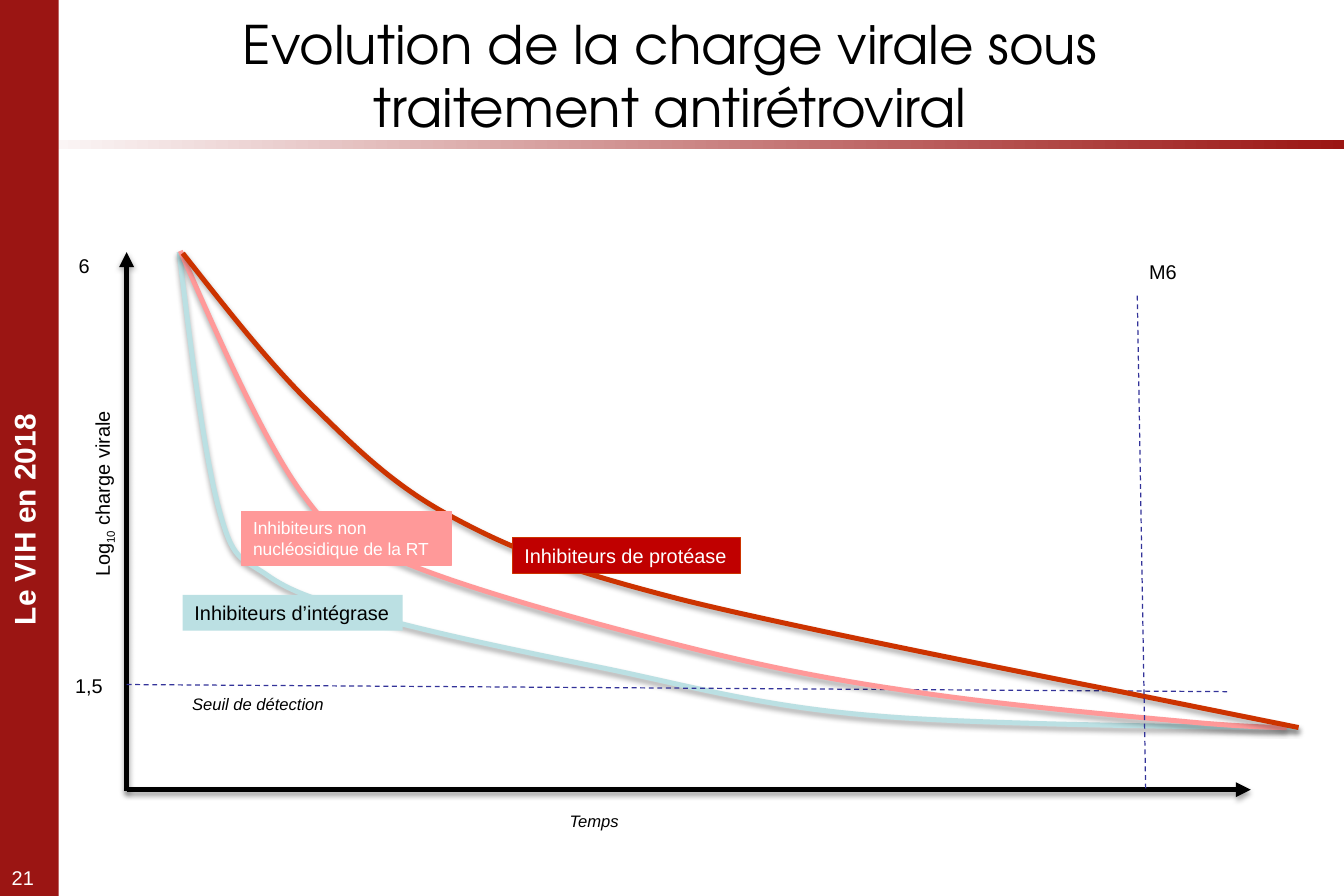
import pptx
import pptx.util
import pptx.dml.color
import pptx.enum.dml
import pptx.enum.shapes
import pptx.enum.text
import lxml.etree
from pptx.util import Inches

COLORS = {
    "red": "9B1513", "white": "FFFFFF", "black": "000000", "dash": "333399",
    "integrase": "BBE0E3", "nnrti": "FF9999", "protease": "CC3300", "label": "C00000",
}
RGB = {name: pptx.dml.color.RGBColor.from_string(c) for name, c in COLORS.items()}
RECT = pptx.enum.shapes.MSO_SHAPE.RECTANGLE
STRAIGHT = pptx.enum.shapes.MSO_CONNECTOR.STRAIGHT
ALIGN = pptx.enum.text.PP_ALIGN
FIT = pptx.enum.text.MSO_AUTO_SIZE
qn = pptx.oxml.ns.qn


def write(sp, text, size, color="black", wrap=False, align=ALIGN.LEFT,
          font="Arial", bold=False, italic=False, fit=FIT.SHAPE_TO_FIT_TEXT):
    tf = sp.text_frame
    tf.word_wrap = wrap
    tf.auto_size = fit
    p = tf.paragraphs[0]
    p.text = text
    p.alignment = align
    p.font.name, p.font.size = font, pptx.util.Pt(size)
    p.font.bold, p.font.italic = bold, italic
    p.font.color.rgb = RGB[color]
    return p


def style_line(sp, color, width, shadow=False, arrow=False, dash=False):
    sp.line.color.rgb = RGB[color]
    sp.line.width = pptx.util.Pt(width)
    if dash:
        sp.line.dash_style = pptx.enum.dml.MSO_LINE.DASH
    if arrow:
        lxml.etree.SubElement(sp.line._ln, qn("a:tailEnd")).set("type", "triangle")
    xml = '<a:effectLst xmlns:a="http://schemas.openxmlformats.org/drawingml/2006/main">'
    if shadow:
        xml += ('<a:outerShdw blurRad="40000" dist="23000" dir="5400000" rotWithShape="0">'
                '<a:srgbClr val="000000"><a:alpha val="35000"/></a:srgbClr></a:outerShdw>')
    sp._element.spPr.append(pptx.oxml.parse_xml(xml + "</a:effectLst>"))


prs = pptx.Presentation()
prs.slide_width, prs.slide_height = Inches(11.25), Inches(7.5)
s = prs.slides.add_slide(prs.slide_layouts[6])

# Gradient rule under the title
rule = s.shapes.add_shape(RECT, 0, Inches(1.17), Inches(11.25), Inches(0.08))
rule.shadow.inherit = False
rule.line.fill.background()
rule.fill.gradient()
rule.fill.gradient_angle = 0
for stop, name in zip(rule.fill.gradient_stops, ("white", "red")):
    stop.color.rgb = RGB[name]

# Side band with its title and the slide number
band = s.shapes.add_shape(RECT, 0, 0, Inches(0.49), Inches(7.5))
band.shadow.inherit = False
band.line.fill.background()
band.fill.solid()
band.fill.fore_color.rgb = RGB["red"]
sp = s.shapes.add_textbox(Inches(-0.79), Inches(4.15), Inches(1.98), Inches(0.4))
sp.rotation = 270
write(sp, "Le VIH en 2018", 18, "white", align=ALIGN.CENTER, bold=True)
sp = s.shapes.add_textbox(0, Inches(7.2), Inches(0.46), Inches(0.3))
write(sp, "21", 12, "white", wrap=True)

# Axes, markers and viral load curves, from back to front.
# Two points make a line; a curve has a start and three Bezier points per segment,
# and a single point left over ends it with a straight segment.
axis = dict(color="black", width=3, shadow=True, arrow=True)
marker = dict(color="dash", width=0.75, dash=True)
load = dict(width=3, shadow=True)
for pts, look in [
    ([(1.5, 2.11), (1.6, 2.95), (1.71, 3.8), (1.83, 4.25),
      (1.95, 4.7), (2.01, 4.66), (2.23, 4.81),
      (2.44, 4.96), (2.67, 5.03), (3.13, 5.16),
      (3.59, 5.29), (4.3, 5.44), (4.99, 5.58),
      (5.69, 5.72), (6.33, 5.91), (7.31, 5.99),
      (8.29, 6.08), (10.87, 6.09), (10.87, 6.09)], dict(load, color="integrase")),
    ([(1.06, 6.62), (1.06, 2.11)], axis),
    ([(1.06, 6.61), (10.47, 6.61)], axis),
    ([(1.06, 5.73), (10.3, 5.79)], marker),
    ([(1.51, 2.1), (1.85, 2.88), (2.2, 3.66), (2.5, 4.09),
      (2.81, 4.52), (2.85, 4.49), (3.34, 4.69),
      (3.83, 4.9), (4.75, 5.16), (5.45, 5.34),
      (6.14, 5.52), (6.77, 5.66), (7.52, 5.77),
      (8.26, 5.89), (9.38, 5.99), (9.92, 6.04),
      (10.46, 6.09), (10.77, 6.09), (10.77, 6.09)], dict(load, color="nnrti")),
    ([(1.53, 2.12), (1.87, 2.55), (2.21, 2.99), (2.58, 3.36),
      (2.96, 3.73), (3.28, 4.06), (3.79, 4.33),
      (4.31, 4.61), (4.74, 4.77), (5.67, 5.01),
      (6.61, 5.25), (9.38, 5.79), (9.38, 5.79),
      (10.87, 6.09)], dict(load, color="protease")),
    ([(9.59, 6.6), (9.52, 2.47)], marker),
]:
    pts = [(Inches(x), Inches(y)) for x, y in pts]
    if len(pts) == 2:
        sp = s.shapes.add_connector(STRAIGHT, *pts[0], *pts[1])
    else:
        builder = s.shapes.build_freeform(*pts[0])
        builder.add_line_segments(pts[1:], close=False)
        sp = builder.convert_to_shape()
        sp.fill.background()
        steps = list(sp._element.iter(qn("a:lnTo")))
        for i in range(0, len(steps) - 2, 3):
            bezier = lxml.etree.Element(qn("a:cubicBezTo"))
            steps[i].addprevious(bezier)
            for step in steps[i:i + 3]:
                bezier.append(step[0])
                step.getparent().remove(step)
    style_line(sp, **look)

# Title
sp = s.shapes.add_textbox(Inches(0.82), Inches(0.19), Inches(9.58), Inches(0.87))
sp.text_frame.vertical_anchor = pptx.enum.text.MSO_ANCHOR.MIDDLE
write(sp, "Evolution de la charge virale sous traitement antirétroviral", 32,
      wrap=True, align=ALIGN.CENTER, font="TeX Gyre Adventor", fit=FIT.NONE)

# Curve labels
for x, y, w, h, text, size, color, fill, border, wrap in [
    (1.53, 4.98, 1.84, 0.3, "Inhibiteurs d’intégrase", 12, "black", "integrase", None, False),
    (2.02, 4.28, 1.76, 0.45, "Inhibiteurs non nucléosidique de la RT", 10.5, "white",
     "nnrti", "nnrti", True),
    (4.29, 4.5, 1.91, 0.3, "Inhibiteurs de protéase", 12, "white", "label", "protease", False),
]:
    sp = s.shapes.add_shape(RECT, Inches(x), Inches(y), Inches(w), Inches(h))
    sp.shadow.inherit = False
    sp.fill.solid()
    sp.fill.fore_color.rgb = RGB[fill]
    if border:
        sp.line.color.rgb = RGB[border]
        sp.line.width = pptx.util.Pt(0.75)
    else:
        sp.line.fill.background()
    write(sp, text, size, color, wrap)

# Axis values and captions
for x, y, w, h, text, size, italic in [
    (9.52, 2.12, 0.44, 0.3, "M6", 12, False),
    (0.53, 5.59, 0.44, 0.3, "1,5", 12, False),
    (0.56, 2.07, 0.29, 0.3, "6", 12, False),
    (1.51, 5.76, 1.31, 0.27, "Seuil de détection", 10, True),
    (4.67, 6.74, 0.63, 0.27, "Temps", 10, True),
]:
    sp = s.shapes.add_textbox(Inches(x), Inches(y), Inches(w), Inches(h))
    write(sp, text, size, italic=italic)

# Vertical axis title with a subscript
sp = s.shapes.add_textbox(Inches(0.02), Inches(3.94), Inches(1.67), Inches(0.3))
sp.rotation = 270
p = write(sp, "Log", 12)
r = p.add_run()
r.text = "10"
r.font._element.set("baseline", "-25000")
p.add_run().text = " charge virale"

prs.save("out.pptx")
